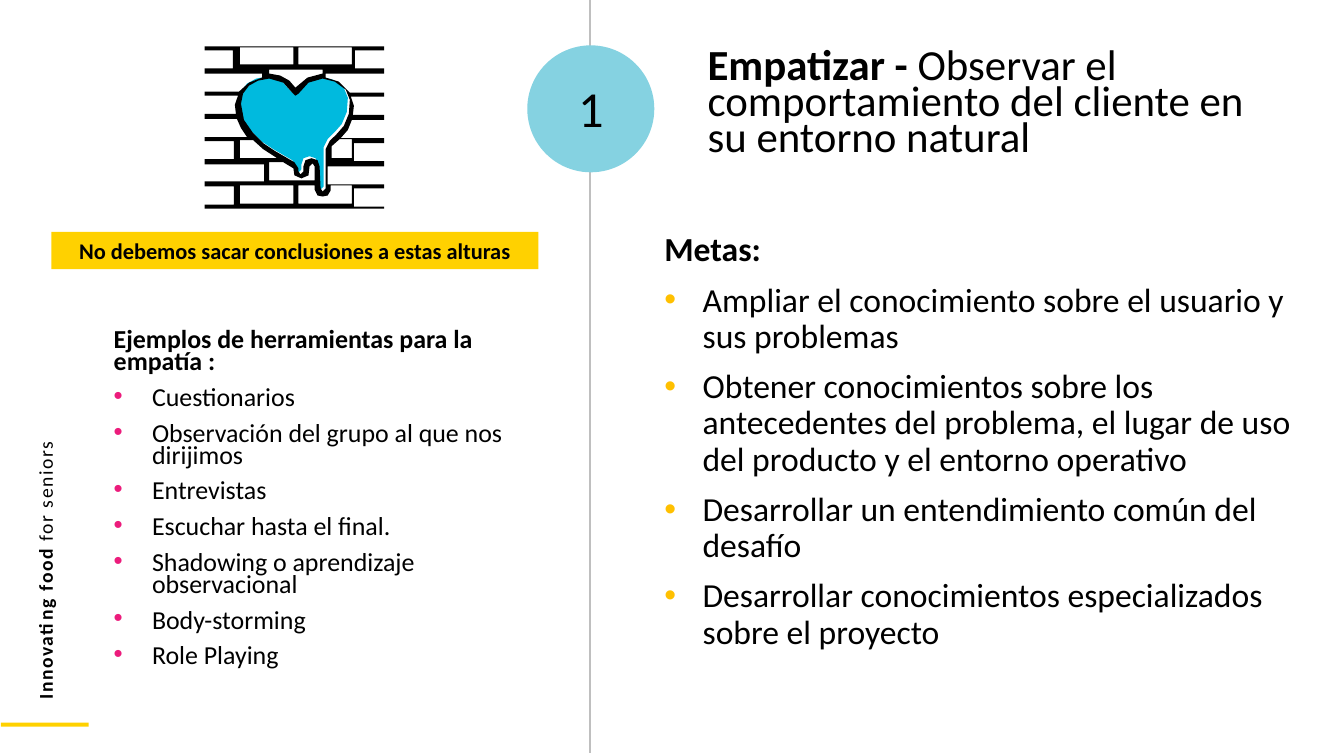
from lxml import etree
from pptx import Presentation
from pptx.dml.color import RGBColor
from pptx.enum.shapes import MSO_CONNECTOR, MSO_SHAPE
from pptx.enum.text import MSO_ANCHOR, PP_ALIGN
from pptx.oxml.ns import qn
from pptx.util import Inches, Pt

RECT, OVAL = MSO_SHAPE.RECTANGLE, MSO_SHAPE.OVAL
TOP, MIDDLE = MSO_ANCHOR.TOP, MSO_ANCHOR.MIDDLE
LEFT, CENTER = PP_ALIGN.LEFT, PP_ALIGN.CENTER
FONT = "Calibri"
BLACK, YELLOW, AQUA = "000000", "FFD100", "85D2E1"
HEART_BLUE, GREY, AMBER, PINK = "00BADE", "BFBFBF", "FFC000", "EC1C7C"

# Content: each paragraph is a list of (text, bold) runs
BRAND = [("Innovating food ", True), ("for seniors", False)]
TITLE = [("Empatizar - ", True),
         ("Observar el comportamiento del cliente en su entorno natural", False)]
BANNER = [("No debemos sacar conclusiones a estas alturas", True)]
STEP = [("1", False)]
GOALS_HEAD = "Metas:"
GOALS = [
    "Ampliar el conocimiento sobre el usuario y sus problemas",
    "Obtener conocimientos sobre los antecedentes del problema, "
    "el lugar de uso del producto y el entorno operativo",
    "Desarrollar un entendimiento común del desafío",
    "Desarrollar conocimientos especializados sobre el proyecto",
]
TOOLS_HEAD = "Ejemplos de herramientas para la empatía :"
TOOLS = [
    "Cuestionarios",
    "Observación del grupo al que nos dirijimos",
    "Entrevistas",
    "Escuchar hasta el final.",
    "Shadowing o aprendizaje observacional",
    "Body-storming",
    "Role Playing",
]

# Wall edges between the mortar lines, from top to bottom
WALL_LEFT, WALL_RIGHT, WALL_TOP, WALL_BOTTOM = 2.03, 3.81, 0.46, 2.07
LEFT_EDGES = [
    [(2.31, 0.5), (2.31, 0.68)],
    [(2.6, 0.73), (2.6, 0.77), (2.47, 0.82), (2.37, 0.91)],
    [(2.36, 0.95), (2.33, 1.04), (2.34, 1.13)],
    [(2.35, 1.18), (2.39, 1.27), (2.45, 1.36)],
    [(2.32, 1.4), (2.32, 1.58)],
    [(2.62, 1.63), (2.62, 1.8)],
    [(2.32, 1.85), (2.32, 2.03)],
]
RIGHT_EDGES = [
    [(3.52, 0.5), (3.52, 0.68)],
    [(3.23, 0.73), (3.23, 0.77), (3.36, 0.81), (3.47, 0.92)],
    [(3.48, 0.96), (3.51, 1.05), (3.5, 1.14)],
    [(3.49, 1.19), (3.45, 1.29), (3.38, 1.37)],
    [(3.51, 1.42), (3.51, 1.6)],
    [(3.25, 1.65), (3.25, 1.83)],
    [(3.51, 1.87), (3.51, 2.05)],
]

# Openings in the wall: bricks and the dripping heart
BRICKS = [
    [(2.38, 0.47), (2.91, 0.47), (2.91, 0.64), (2.38, 0.64)],
    [(2.96, 0.47), (3.49, 0.47), (3.49, 0.64), (2.96, 0.64)],
    [(2.67, 0.69), (3.2, 0.69), (3.2, 0.73), (3.05, 0.77), (2.93, 0.87),
     (2.87, 0.8), (2.78, 0.75), (2.67, 0.73)],
    [(2.38, 1.39), (2.51, 1.39), (2.61, 1.48), (2.75, 1.57), (2.38, 1.57)],
    [(3.49, 1.38), (3.37, 1.38), (3.29, 1.45), (3.29, 1.57), (3.49, 1.57)],
    [(2.67, 1.61), (2.81, 1.61), (2.91, 1.67), (2.92, 1.74), (2.99, 1.77),
     (3.06, 1.74), (3.07, 1.65), (3.1, 1.62), (3.12, 1.65), (3.12, 1.79), (2.67, 1.79)],
    [(2.38, 1.84), (2.91, 1.84), (2.91, 2.02), (2.38, 2.02)],
    [(2.96, 1.84), (3.12, 1.84), (3.12, 1.88), (3.15, 1.94), (3.2, 1.95), (3.25, 1.94),
     (3.28, 1.89), (3.28, 1.84), (3.49, 1.84), (3.49, 2.02), (2.96, 2.02)],
]
HEART = [(2.67, 0.78), (2.81, 0.82), (2.9, 0.92), (2.93, 0.95), (2.96, 0.93),
         (3.06, 0.82), (3.2, 0.78), (3.32, 0.81), (3.43, 0.89), (3.47, 0.99),
         (3.46, 1.13), (3.41, 1.25), (3.34, 1.33), (3.27, 1.4), (3.23, 1.48),
         (3.23, 1.87), (3.2, 1.9), (3.18, 1.87),
         (3.17, 1.65), (3.15, 1.59), (3.09, 1.57), (3.03, 1.59),
         (3.01, 1.65), (3.01, 1.7), (2.98, 1.73), (2.96, 1.7), (2.96, 1.67),
         (2.92, 1.61), (2.73, 1.5), (2.61, 1.42), (2.51, 1.32), (2.42, 1.19),
         (2.39, 1.03), (2.41, 0.93), (2.47, 0.85), (2.56, 0.8)]


def rgb(color):
    return RGBColor.from_string(color)


def paint(sp, fill):
    sp.shadow.inherit = False
    sp.fill.solid()
    sp.fill.fore_color.rgb = rgb(fill)
    sp.line.fill.background()
    return sp


def add_box(shape, x, y, w, h, fill):
    return paint(shapes.add_shape(shape, Inches(x), Inches(y), Inches(w), Inches(h)), fill)


def add_outline(contours, fill):
    """One freeform; every contour after the first is an opening."""
    fb = None
    for contour in contours:
        pts = [(Inches(x), Inches(y)) for x, y in contour]
        if fb is None:
            fb = shapes.build_freeform(*pts[0])
        else:
            fb.move_to(*pts[0])
        fb.add_line_segments(pts[1:], close=True)
    paint(fb.convert_to_shape(), fill)


def wall_side(end, edges):
    """Step in from the wall end to each edge and out again."""
    return [pt for edge in edges
            for pt in [(end, edge[0][1]), *edge, (end, edge[-1][1])]]


def add_bullet(p, color):
    pPr = p._p.get_or_add_pPr()
    pPr.set("marL", str(Inches(0.38)))
    pPr.set("indent", str(-Inches(0.38)))
    clr = etree.SubElement(pPr, qn("a:buClr"))
    etree.SubElement(clr, qn("a:srgbClr")).set("val", color)
    etree.SubElement(pPr, qn("a:buFont")).set("typeface", "Arial")
    etree.SubElement(pPr, qn("a:buChar")).set("char", "•")


def write(sp, paras, size, spacing=1.0, align=LEFT, anchor=TOP, bullet=None):
    """Fill sp with paragraphs; all but the first get a bullet if a colour is given."""
    tf = sp.text_frame
    tf.word_wrap = True
    tf.vertical_anchor = anchor
    for i, runs in enumerate(paras):
        p = tf.add_paragraph() if i else tf.paragraphs[0]
        p.alignment, p.line_spacing = align, spacing
        if i:
            p.space_before = Pt(10)
            if bullet:
                add_bullet(p, bullet)
        for text, bold in runs:
            r = p.add_run()
            r.text = text
            r.font.name, r.font.size, r.font.bold = FONT, Pt(size), bold
            r.font.color.rgb = rgb(BLACK)


def add_text(x, y, w, h, paras, size, **style):
    sp = shapes.add_textbox(Inches(x), Inches(y), Inches(w), Inches(h))
    write(sp, paras, size, **style)
    return sp


def with_head(head, items):
    return [[(head, True)]] + [[(item, False)] for item in items]


prs = Presentation()
prs.slide_width, prs.slide_height = Inches(13.33), Inches(7.5)
shapes = prs.slides.add_slide(prs.slide_layouts[6]).shapes

# Divider, step circle and footer bar
divider = shapes.add_connector(MSO_CONNECTOR.STRAIGHT, Inches(5.85), 0, Inches(5.85), Inches(7.47))
divider.line.color.rgb = rgb(GREY)
divider.line.width = Pt(1)
etree.SubElement(divider._element.spPr, qn("a:effectLst"))
add_box(OVAL, 5.23, 0.45, 1.26, 1.26, AQUA)
add_box(RECT, 0.01, 7.17, 0.87, 0.04, YELLOW)

# Vertical brand line
brand = add_text(-3.32, 3.1, 7.54, 0.34, [BRAND], 14)
brand.rotation = 270
for r in brand.text_frame.paragraphs[0].runs:
    r.font._element.set("spc", "110")

# Text blocks
add_text(6.49, 2.26, 6.62, 4.07, with_head(GOALS_HEAD, GOALS), 24, spacing=0.9, bullet=AMBER)
add_text(6.92, 0.46, 5.64, 1.25, [TITLE], 30.6, spacing=0.7)
add_text(1.03, 3.24, 4.3, 3.76, with_head(TOOLS_HEAD, TOOLS), 18.5, spacing=0.7, bullet=PINK)
add_text(5.23, 0.78, 1.26, 0.94, [STEP], 36, spacing=0.9, align=CENTER)
banner = add_box(RECT, 0.51, 2.3, 4.83, 0.37, YELLOW)
write(banner, [BANNER], 16, align=CENTER, anchor=MIDDLE)

# Blue heart behind the brick wall
add_outline([[(x - 0.02, y - 0.02) for x, y in HEART]], HEART_BLUE)
wall = ([(WALL_LEFT, WALL_TOP), (WALL_RIGHT, WALL_TOP)]
        + wall_side(WALL_RIGHT, RIGHT_EDGES)
        + [(WALL_RIGHT, WALL_BOTTOM), (WALL_LEFT, WALL_BOTTOM)]
        + wall_side(WALL_LEFT, LEFT_EDGES)[::-1])
add_outline([wall, HEART, *BRICKS], BLACK)

prs.save("out.pptx")
